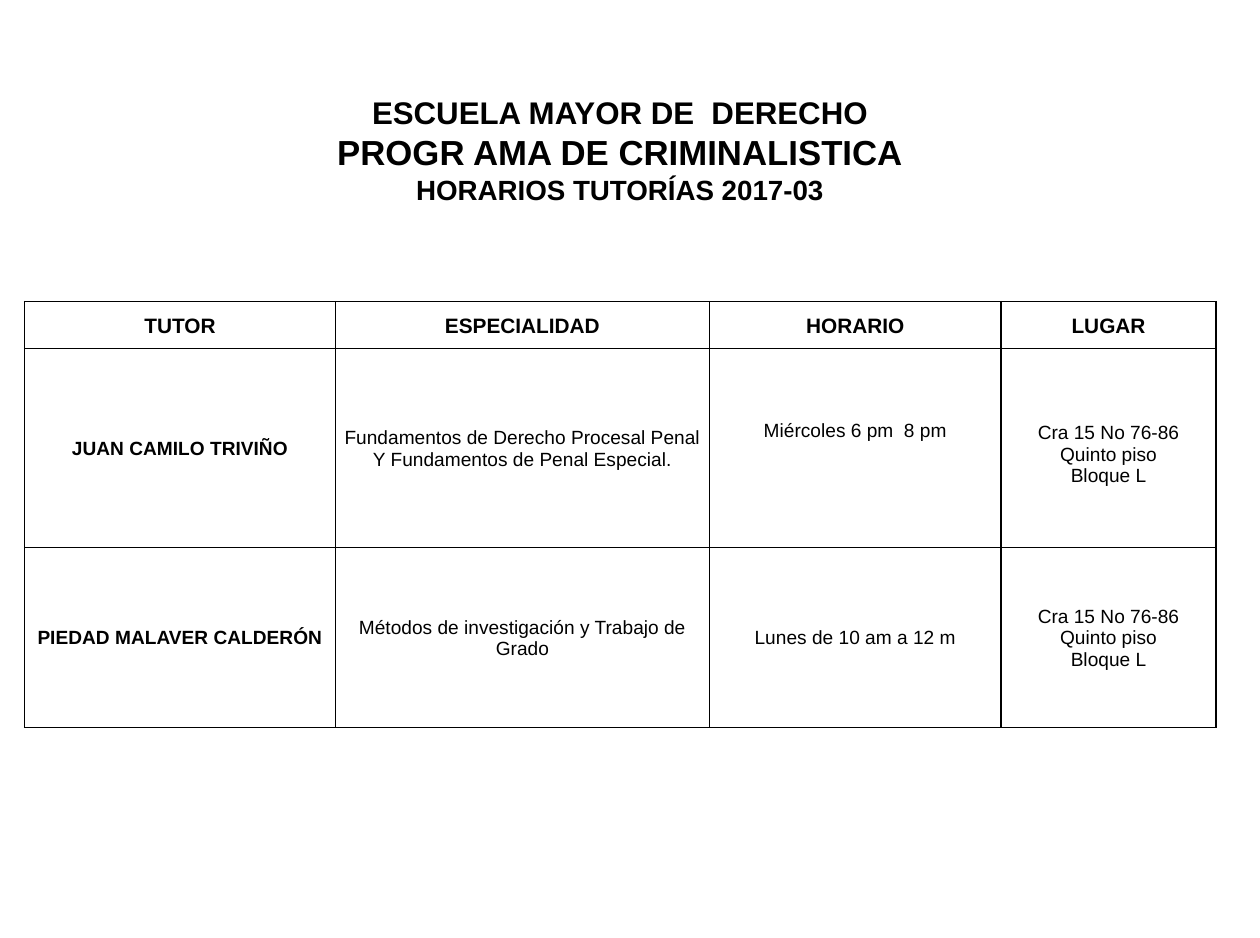
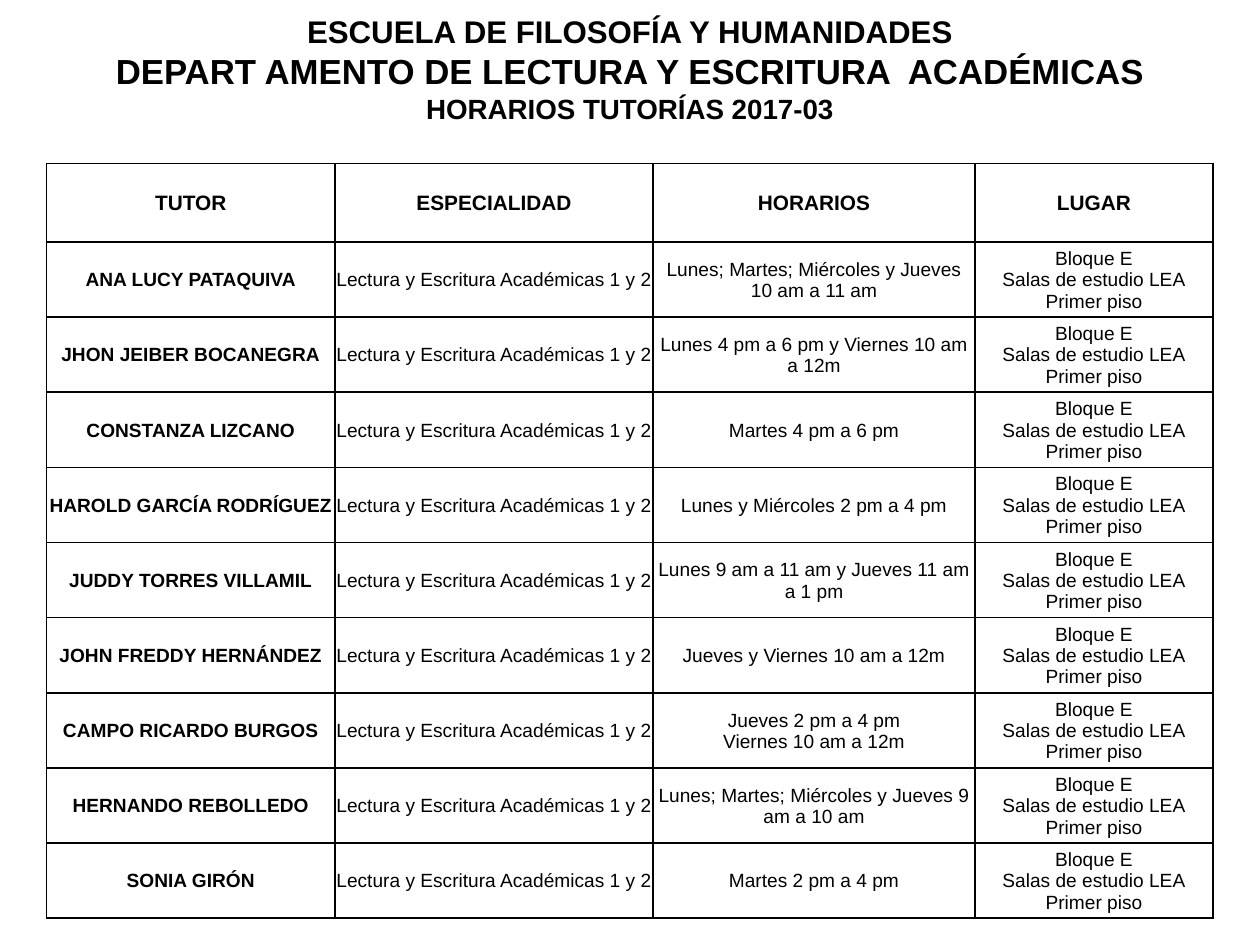
from lxml import etree
from pptx import Presentation
from pptx.dml.color import RGBColor
from pptx.enum.text import MSO_ANCHOR, MSO_AUTO_SIZE, PP_ALIGN
from pptx.oxml.ns import qn
from pptx.util import Pt

CENTER, TOP, MIDDLE = PP_ALIGN.CENTER, MSO_ANCHOR.TOP, MSO_ANCHOR.MIDDLE
NO_AUTOFIT = MSO_AUTO_SIZE.NONE
TITLE_ONLY = 5

# Shared style
COLORS = {"text": "000000", "border": "000000"}
FONT = "Arial"
SLIDE_W, SLIDE_H = 725.76, 540
TITLE_SIZES = (18, 20, 16)
TITLE_H = 75
HEADER_SIZE, BODY_SIZE = 12, 11
CELL_MARGIN = 0.72
BORDER_W = 1

# Content
TERM = "HORARIOS TUTORÍAS 2017-03"
LAW_PLACE = "Cra 15 No 76-86\nQuinto piso\nBloque L"
READING = "Lectura y Escritura Académicas 1 y 2"
READING_PLACE = "Bloque E\nSalas de estudio LEA\nPrimer piso"

READING_TUTORS = [
    ("ANA LUCY PATAQUIVA", "Lunes; Martes; Miércoles y Jueves 10 am a 11 am"),
    ("JHON JEIBER BOCANEGRA", "Lunes 4 pm a 6 pm y Viernes 10 am a 12m"),
    ("CONSTANZA LIZCANO", "Martes 4 pm a 6 pm"),
    ("HAROLD GARCÍA RODRÍGUEZ", "Lunes y Miércoles 2 pm a 4 pm"),
    ("JUDDY TORRES VILLAMIL", "Lunes 9 am a 11 am y Jueves 11 am a 1 pm"),
    ("JOHN FREDDY HERNÁNDEZ", "Jueves y Viernes 10 am a 12m"),
    ("CAMPO RICARDO BURGOS", "Jueves 2 pm a 4 pm\nViernes 10 am a 12m"),
    ("HERNANDO REBOLLEDO", "Lunes; Martes; Miércoles y Jueves 9 am a 10 am"),
    ("SONIA GIRÓN", "Martes 2 pm a 4 pm"),
]

SCHEDULES = [
    {
        "title": ("ESCUELA MAYOR DE  DERECHO", "PROGR AMA DE CRIMINALISTICA", TERM),
        "title_top": 50,
        "title_width": 714.24,
        "table_at": (14.2, 173.7),
        "columns": (179, 215.5, 168, 123.8),
        "row_heights": (27, 114.6, 103.7),
        "rows": [
            ("TUTOR", "ESPECIALIDAD", "HORARIO", "LUGAR"),
            ("JUAN CAMILO TRIVIÑO",
             "Fundamentos de Derecho Procesal Penal Y Fundamentos de Penal Especial.",
             "Miércoles 6 pm  8 pm", LAW_PLACE),
            ("PIEDAD MALAVER CALDERÓN", "Métodos de investigación y Trabajo de Grado",
             "Lunes de 10 am a 12 m", LAW_PLACE),
        ],
        # (row, column): (top margin, bottom margin)
        "margins": {(1, 2): (0, 19.5), (1, 3): (7.5, 0)},
    },
    {
        "title": ("ESCUELA DE FILOSOFÍA Y HUMANIDADES",
                  "DEPART AMENTO DE LECTURA Y ESCRITURA  ACADÉMICAS", TERM),
        "title_top": 3.4,
        "title_width": SLIDE_W,
        "table_at": (26.8, 94.1),
        "columns": (166.2, 183.2, 185.5, 137),
        "row_heights": (45.2,) + (43.28,) * len(READING_TUTORS),
        "rows": [("TUTOR", "ESPECIALIDAD", "HORARIOS", "LUGAR")]
                + [(tutor, READING, hours, READING_PLACE) for tutor, hours in READING_TUTORS],
        "margins": {},
    },
]


def format_paragraph(paragraph, size, bold):
    paragraph.alignment = CENTER
    font = paragraph.font
    font.name, font.size, font.bold = FONT, Pt(size), bold
    font.color.rgb = RGBColor.from_string(COLORS["text"])


def add_title(slide, schedule):
    title = slide.shapes.title
    title.left, title.top = Pt(0), Pt(schedule["title_top"])
    title.width, title.height = Pt(schedule["title_width"]), Pt(TITLE_H)
    frame = title.text_frame
    frame.text = "\n".join(schedule["title"])
    frame.auto_size, frame.vertical_anchor, frame.word_wrap = NO_AUTOFIT, TOP, True
    for paragraph, size in zip(frame.paragraphs, TITLE_SIZES):
        format_paragraph(paragraph, size, True)


def add_borders(cell):
    properties = cell._tc.get_or_add_tcPr()
    for side in ("a:lnL", "a:lnR", "a:lnT", "a:lnB"):
        line = etree.SubElement(properties, qn(side), w=str(Pt(BORDER_W)))
        fill = etree.SubElement(line, qn("a:solidFill"))
        etree.SubElement(fill, qn("a:srgbClr"), val=COLORS["border"])


def fill_cell(cell, text, size, bold, margins):
    cell.text = text
    cell.vertical_anchor = MIDDLE
    cell.margin_left = cell.margin_right = Pt(CELL_MARGIN)
    cell.margin_top, cell.margin_bottom = (Pt(margin) for margin in margins)
    add_borders(cell)
    cell.fill.background()
    for paragraph in cell.text_frame.paragraphs:
        format_paragraph(paragraph, size, bold)


def add_schedule(slide, schedule):
    rows, widths, heights = schedule["rows"], schedule["columns"], schedule["row_heights"]
    left, top = schedule["table_at"]
    table = slide.shapes.add_table(len(rows), len(widths), Pt(left), Pt(top),
                                   Pt(sum(widths)), Pt(sum(heights))).table
    table.horz_banding = table.first_row = False
    for column, width in zip(table.columns, widths):
        column.width = Pt(width)
    for r, texts in enumerate(rows):
        table.rows[r].height = Pt(heights[r])
        for c, text in enumerate(texts):
            size = HEADER_SIZE if r == 0 else BODY_SIZE
            margins = schedule["margins"].get((r, c), (CELL_MARGIN, 0))
            fill_cell(table.cell(r, c), text, size, r == 0 or c == 0, margins)


def main():
    prs = Presentation()
    prs.slide_width, prs.slide_height = Pt(SLIDE_W), Pt(SLIDE_H)
    for schedule in SCHEDULES:
        slide = prs.slides.add_slide(prs.slide_layouts[TITLE_ONLY])
        add_schedule(slide, schedule)
        add_title(slide, schedule)
    prs.save("out.pptx")


if __name__ == "__main__":
    main()
